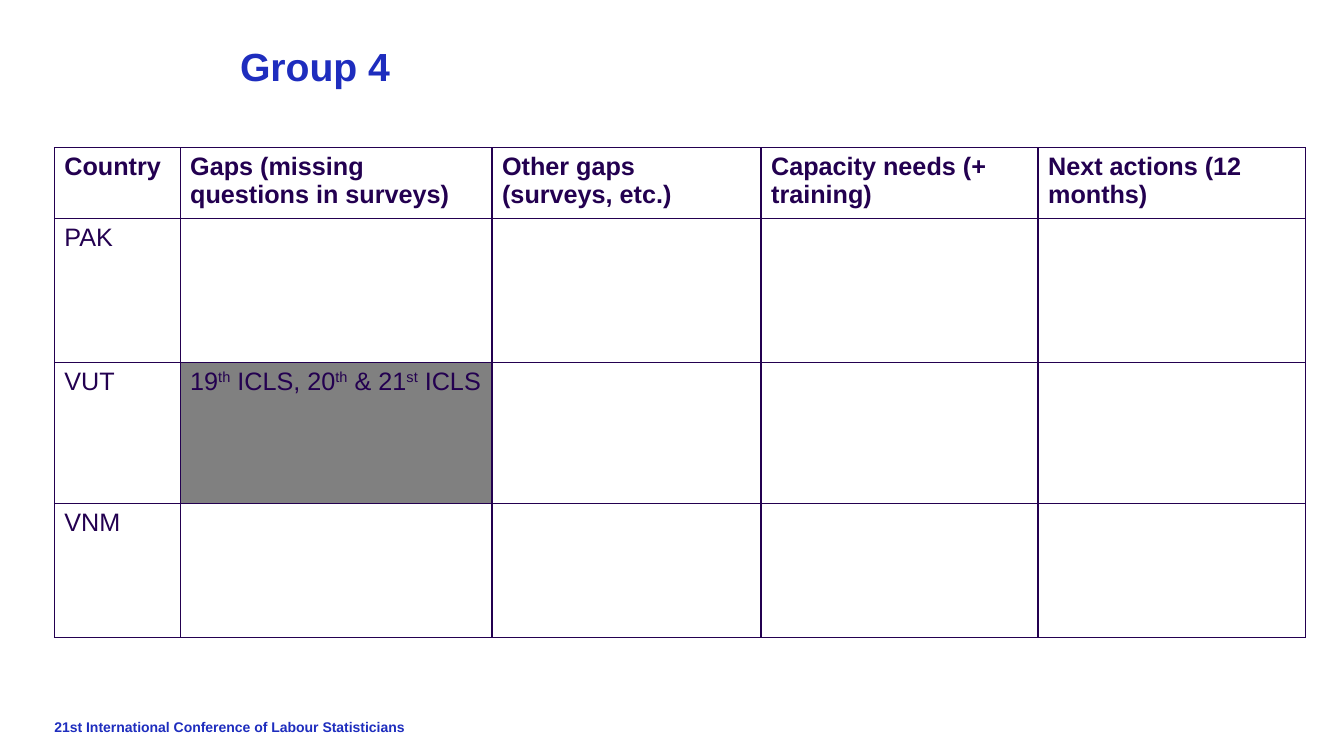
from lxml import etree
from pptx import Presentation
from pptx.dml.color import RGBColor
from pptx.oxml.ns import qn
from pptx.util import Cm, Pt

BLUE = RGBColor(0x1E, 0x2D, 0xBE)
PURPLE = RGBColor(0x23, 0x00, 0x50)
GREY = RGBColor(0x80, 0x80, 0x80)
WHITE = RGBColor(0xFF, 0xFF, 0xFF)

HEADINGS = ["Country", "Gaps (missing questions in surveys)", "Other gaps (surveys, etc.)",
            "Capacity needs (+ training)", "Next actions (12 months)"]
COUNTRIES = ["PAK", "VUT", "VNM"]
# Every second piece is superscript
VUT_GAPS = ["19", "th", " ICLS, 20", "th", " & 21", "st", " ICLS"]
COLUMN_WIDTHS = [3.17, 7.86, 6.78, 6.98, 6.73]
ROW_HEIGHTS = [1.68, 3.63, 3.55, 3.38]


def add_run(paragraph, text, size, color, bold):
    run = paragraph.add_run()
    run.text = text
    for name, value in {"name": "Arial", "size": Pt(size), "bold": bold}.items():
        setattr(run.font, name, value)
    run.font.color.rgb = color
    return run


def draw_borders(cell):
    properties = cell._tc.get_or_add_tcPr()
    for position, side in enumerate(["lnL", "lnR", "lnT", "lnB"]):
        line = etree.Element(qn(f"a:{side}"), w=str(Pt(1)))
        fill = etree.SubElement(line, qn("a:solidFill"))
        etree.SubElement(fill, qn("a:srgbClr"), val=str(PURPLE))
        properties.insert(position, line)


prs = Presentation()
prs.slide_width, prs.slide_height = Cm(33.87), Cm(19.05)
slide = prs.slides.add_slide(prs.slide_layouts[6])

# Footer and title
for text, left, top, width, height, size, spacing in [
    ("21st International Conference of Labour Statisticians", 1.37, 18.1, 15.57, 0.5, 10, 1),
    ("Group 4", 6.05, 1.2, 21.75, 1.37, 28, 0.9),
]:
    frame = slide.shapes.add_textbox(Cm(left), Cm(top), Cm(width), Cm(height)).text_frame
    for name, value in {"word_wrap": True, "margin_left": 0, "margin_right": 0,
                        "margin_top": 0, "margin_bottom": 0}.items():
        setattr(frame, name, value)
    paragraph = frame.paragraphs[0]
    paragraph.line_spacing = spacing
    add_run(paragraph, text, size, BLUE, True)

# Country table
table = slide.shapes.add_table(
    len(ROW_HEIGHTS), len(COLUMN_WIDTHS), Cm(1.37), Cm(3.72),
    Cm(sum(COLUMN_WIDTHS)), Cm(sum(ROW_HEIGHTS))).table
table.first_row = table.horz_banding = False
for column, width in zip(table.columns, COLUMN_WIDTHS):
    column.width = Cm(width)
for row, height in zip(table.rows, ROW_HEIGHTS):
    row.height = Cm(height)

for cell in table.iter_cells():
    cell.fill.solid()
    cell.fill.fore_color.rgb = WHITE
    draw_borders(cell)

for column, heading in enumerate(HEADINGS):
    add_run(table.cell(0, column).text_frame.paragraphs[0], heading, 18, PURPLE, True)
for row, country in enumerate(COUNTRIES, start=1):
    add_run(table.cell(row, 0).text_frame.paragraphs[0], country, 18, PURPLE, False)

vut_gaps = table.cell(2, 1)
vut_gaps.fill.fore_color.rgb = GREY
for index, piece in enumerate(VUT_GAPS):
    run = add_run(vut_gaps.text_frame.paragraphs[0], piece, 18, PURPLE, False)
    if index % 2:
        run._r.get_or_add_rPr().set("baseline", "30000")

prs.save("out.pptx")
